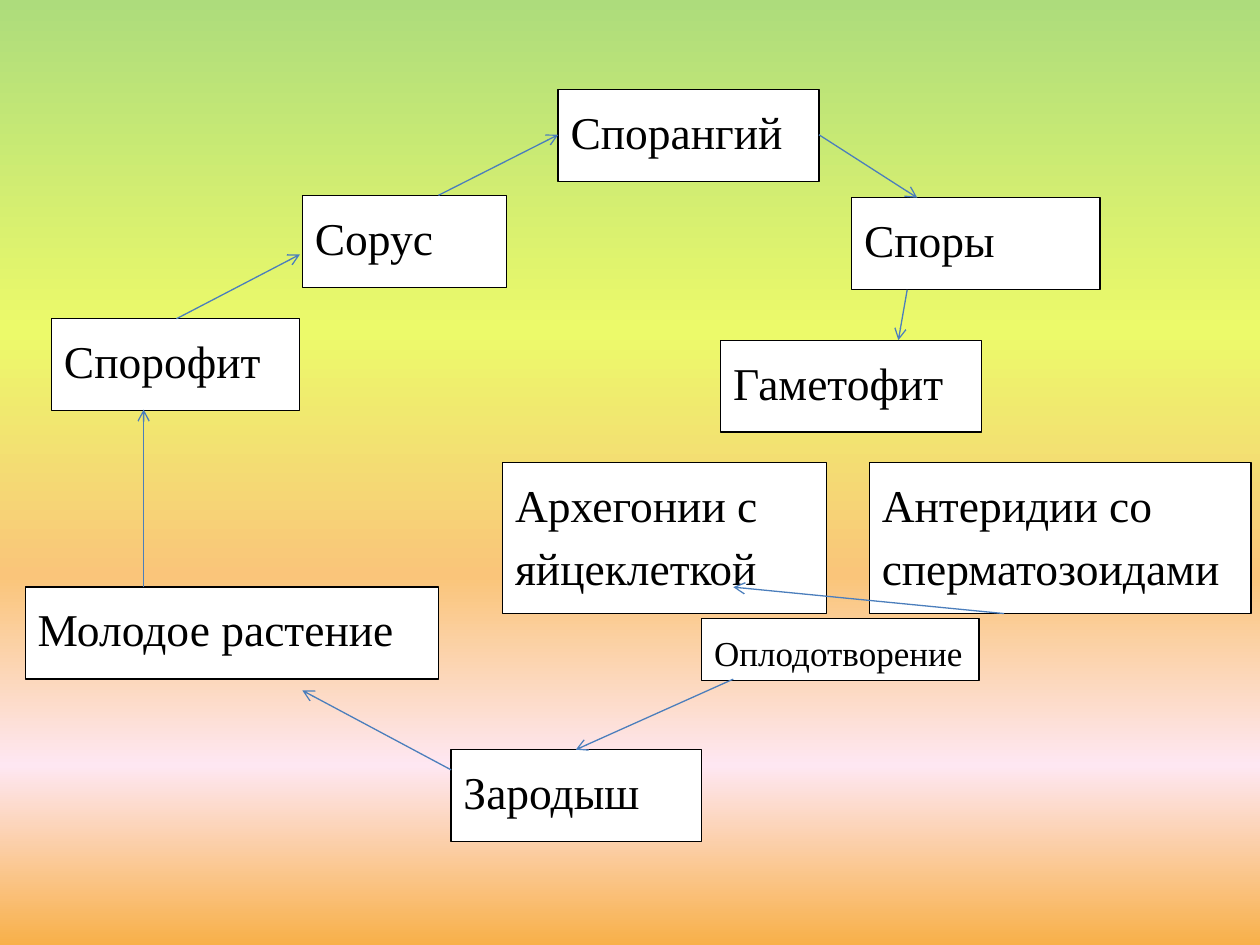
from lxml import etree
from pptx import Presentation
from pptx.dml.color import RGBColor
from pptx.enum.shapes import MSO_CONNECTOR
from pptx.enum.text import MSO_AUTO_SIZE
from pptx.oxml.ns import qn
from pptx.util import Inches, Pt

STRAIGHT = MSO_CONNECTOR.STRAIGHT
GROW = MSO_AUTO_SIZE.SHAPE_TO_FIT_TEXT
FONT = "Times New Roman"
BLACK, WHITE, BLUE = "000000", "FFFFFF", "4B7EBC"
LINE_WIDTH = 0.75
BLANK_LAYOUT = 6

BACKGROUND = [(0, "ADDC7C"), (35, "ECFA6A"), (61, "FAC57A"), (81, "FEE7F2"), (100, "F8B049")]

ONE_LINE, TWO_LINES, SMALL_LINE = (0.73, 26), (1.2, 26), (0.49, 20)

STAGES = [
    ("Спорофит", 0.41, 2.53, 1.97, ONE_LINE),
    ("Сорус", 2.4, 1.55, 1.62, ONE_LINE),
    ("Спорангий", 4.43, 0.71, 2.07, ONE_LINE),
    ("Споры", 6.76, 1.57, 1.97, ONE_LINE),
    ("Гаметофит", 5.72, 2.7, 2.07, ONE_LINE),
    ("Антеридии со сперматозоидами", 6.9, 3.67, 3.03, TWO_LINES),
    ("Архегонии с яйцеклеткой", 3.99, 3.67, 2.57, TWO_LINES),
    ("Оплодотворение", 5.57, 4.91, 2.2, SMALL_LINE),
    ("Зародыш", 3.58, 5.95, 1.99, ONE_LINE),
    ("Молодое растение", 0.2, 4.66, 3.28, ONE_LINE),
]

ARROWS = [
    ((1.4, 2.53), (2.38, 2.02)),
    ((3.48, 1.55), (4.43, 1.07)),
    ((6.5, 1.07), (7.28, 1.57)),
    ((7.2, 2.3), (7.13, 2.7)),
    ((7.97, 4.87), (5.82, 4.66)),
    ((5.82, 5.39), (4.57, 5.95)),
    ((3.58, 6.11), (2.4, 5.48)),
    ((1.14, 4.66), (1.14, 3.25)),
]


def color(value):
    return RGBColor.from_string(value)


def set_line(shape, value):
    shape.line.color.rgb = color(value)
    shape.line.width = Pt(LINE_WIDTH)


def paint_background(slide):
    fill = slide.background.fill
    fill.gradient()
    fill.gradient_angle = 270
    stops = next(slide.element.iter(qn("a:gsLst")))
    for stop in list(stops):
        stops.remove(stop)
    for position, value in BACKGROUND:
        stop = etree.SubElement(stops, qn("a:gs"), pos=str(position * 1000))
        etree.SubElement(stop, qn("a:srgbClr"), val=value)


def add_stage(slide, text, left, top, width, style):
    height, size = style
    shape = slide.shapes.add_textbox(Inches(left), Inches(top), Inches(width), Inches(height))
    shape.fill.solid()
    shape.fill.fore_color.rgb = color(WHITE)
    set_line(shape, BLACK)
    frame = shape.text_frame
    frame.word_wrap = True
    frame.auto_size = GROW
    paragraph = frame.paragraphs[0]
    paragraph.text = text
    paragraph.line_spacing = 1.15
    paragraph.space_after = Pt(10)
    paragraph.font.name = FONT
    paragraph.font.size = Pt(size)
    paragraph.font.color.rgb = color(BLACK)


def add_arrow(slide, start, end):
    points = [Inches(value) for value in start + end]
    connector = slide.shapes.add_connector(STRAIGHT, *points)
    set_line(connector, BLUE)
    properties = connector.element.spPr
    etree.SubElement(properties.find(qn("a:ln")), qn("a:tailEnd"), type="arrow")
    etree.SubElement(properties, qn("a:effectLst"))


def main():
    presentation = Presentation()
    presentation.slide_width = Inches(10)
    presentation.slide_height = Inches(7.5)
    slide = presentation.slides.add_slide(presentation.slide_layouts[BLANK_LAYOUT])
    paint_background(slide)
    for stage in STAGES:
        add_stage(slide, *stage)
    for start, end in ARROWS:
        add_arrow(slide, start, end)
    presentation.save("out.pptx")


if __name__ == "__main__":
    main()
